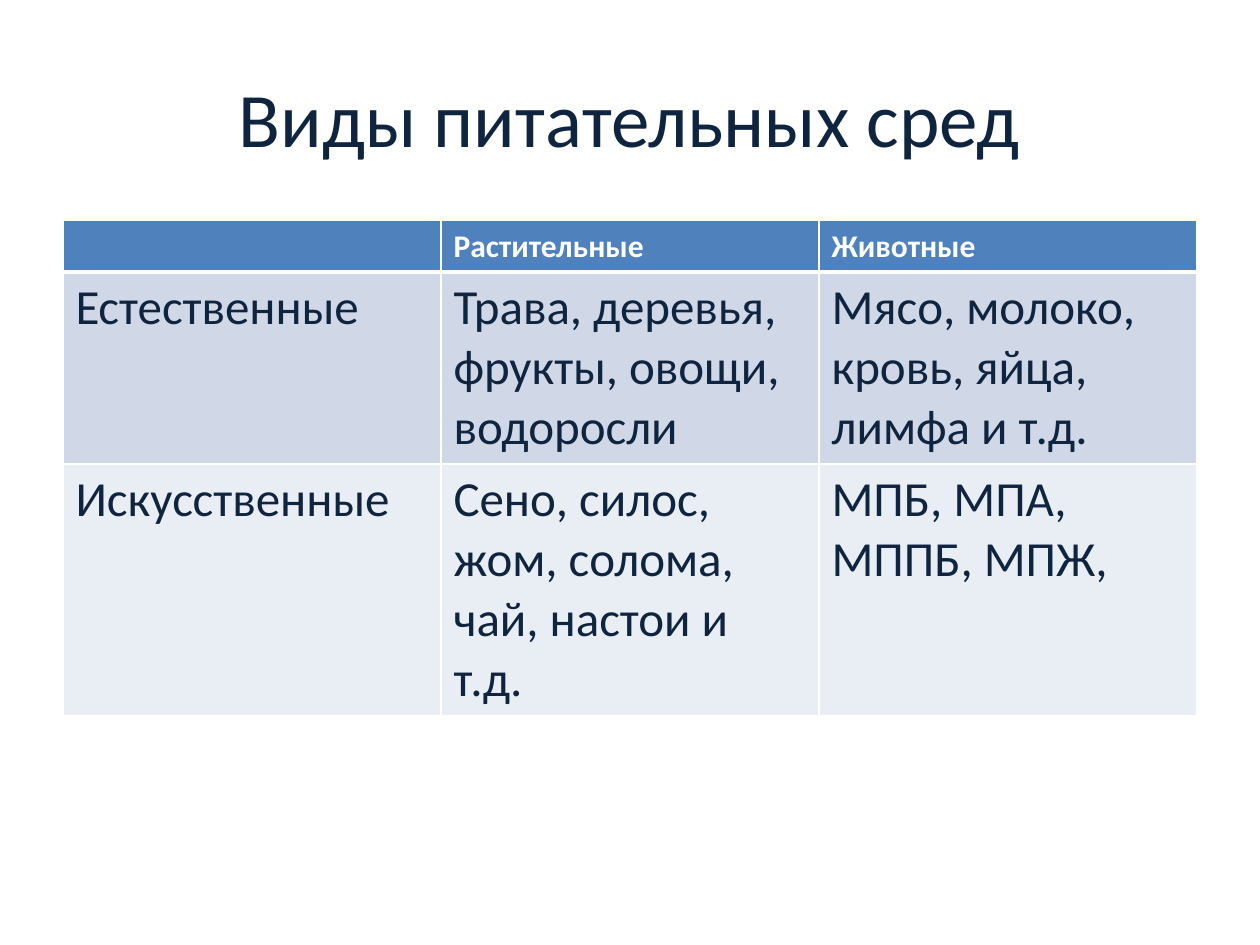
from lxml import etree
from pptx import Presentation
from pptx.dml.color import RGBColor
from pptx.enum.text import MSO_ANCHOR, PP_ALIGN
from pptx.oxml.ns import qn
from pptx.util import Cm, Pt

LEFT, CENTER = PP_ALIGN.LEFT, PP_ALIGN.CENTER
MIDDLE = MSO_ANCHOR.MIDDLE

TITLE = "Виды питательных сред"
ROWS = [
    ("", "Растительные", "Животные"),
    ("Естественные", "Трава, деревья, фрукты, овощи, водоросли", "Мясо, молоко, кровь, яйца, лимфа и т.д."),
    ("Искусственные", "Сено, силос, жом, солома, чай, настои и т.д.", "МПБ, МПА, МППБ, МПЖ,"),
]
ROW_HEIGHTS = [Cm(1.03), Cm(3.87), Cm(5.07)]

THEME = {
    "font": "Calibri",
    "ink": "0F243E",
    "white": "FFFFFF",
    "fills": ["4F81BD", "D0D8E8", "E9EDF4"],
    "title_size": 44,
    "header_size": 18,
    "body_size": 28,
    "line": 1,
    "header_line": 3,
}

MARGIN = Cm(1.27)
CONTENT_WIDTH = Cm(22.86)
TITLE_TOP, TITLE_HEIGHT = Cm(0.76), Cm(3.18)
TABLE_TOP = Cm(4.45)


def write_text(frame, text, size, color=THEME["ink"], bold=False, align=LEFT):
    frame.word_wrap = True
    paragraph = frame.paragraphs[0]
    paragraph.alignment = align
    paragraph.font.size = Pt(size)
    if text:
        run = paragraph.add_run()
        run.text = text
        run.font.name = THEME["font"]
        run.font.size = Pt(size)
        run.font.bold = bold
        run.font.color.rgb = RGBColor.from_string(color)


def set_borders(cell, top, bottom):
    properties = cell._tc.get_or_add_tcPr()
    widths = {"a:lnL": THEME["line"], "a:lnR": THEME["line"], "a:lnT": top, "a:lnB": bottom}
    for tag, width in widths.items():
        line = etree.SubElement(properties, qn(tag), w=str(Pt(width)))
        fill = etree.SubElement(line, qn("a:solidFill"))
        etree.SubElement(fill, qn("a:srgbClr"), val=THEME["white"])


def add_title(slide):
    shape = slide.shapes.add_textbox(MARGIN, TITLE_TOP, CONTENT_WIDTH, TITLE_HEIGHT)
    shape.text_frame.vertical_anchor = MIDDLE
    write_text(shape.text_frame, TITLE, THEME["title_size"], align=CENTER)


def add_media_table(slide):
    shape = slide.shapes.add_table(
        len(ROWS), len(ROWS[0]), MARGIN, TABLE_TOP, CONTENT_WIDTH, sum(ROW_HEIGHTS)
    )
    table = shape.table
    for row_index, texts in enumerate(ROWS):
        table.rows[row_index].height = ROW_HEIGHTS[row_index]
        header = row_index == 0
        size = THEME["header_size"] if header else THEME["body_size"]
        color = THEME["white"] if header else THEME["ink"]
        top = THEME["header_line"] if row_index == 1 else THEME["line"]
        bottom = THEME["header_line"] if header else THEME["line"]
        for column_index, text in enumerate(texts):
            cell = table.cell(row_index, column_index)
            set_borders(cell, top, bottom)
            cell.fill.solid()
            cell.fill.fore_color.rgb = RGBColor.from_string(THEME["fills"][row_index])
            write_text(cell.text_frame, text, size, color=color, bold=header)


def main():
    presentation = Presentation()
    presentation.slide_width = Cm(25.4)
    presentation.slide_height = Cm(19.05)
    slide = presentation.slides.add_slide(presentation.slide_layouts[6])
    add_title(slide)
    add_media_table(slide)
    presentation.save("out.pptx")


if __name__ == "__main__":
    main()
